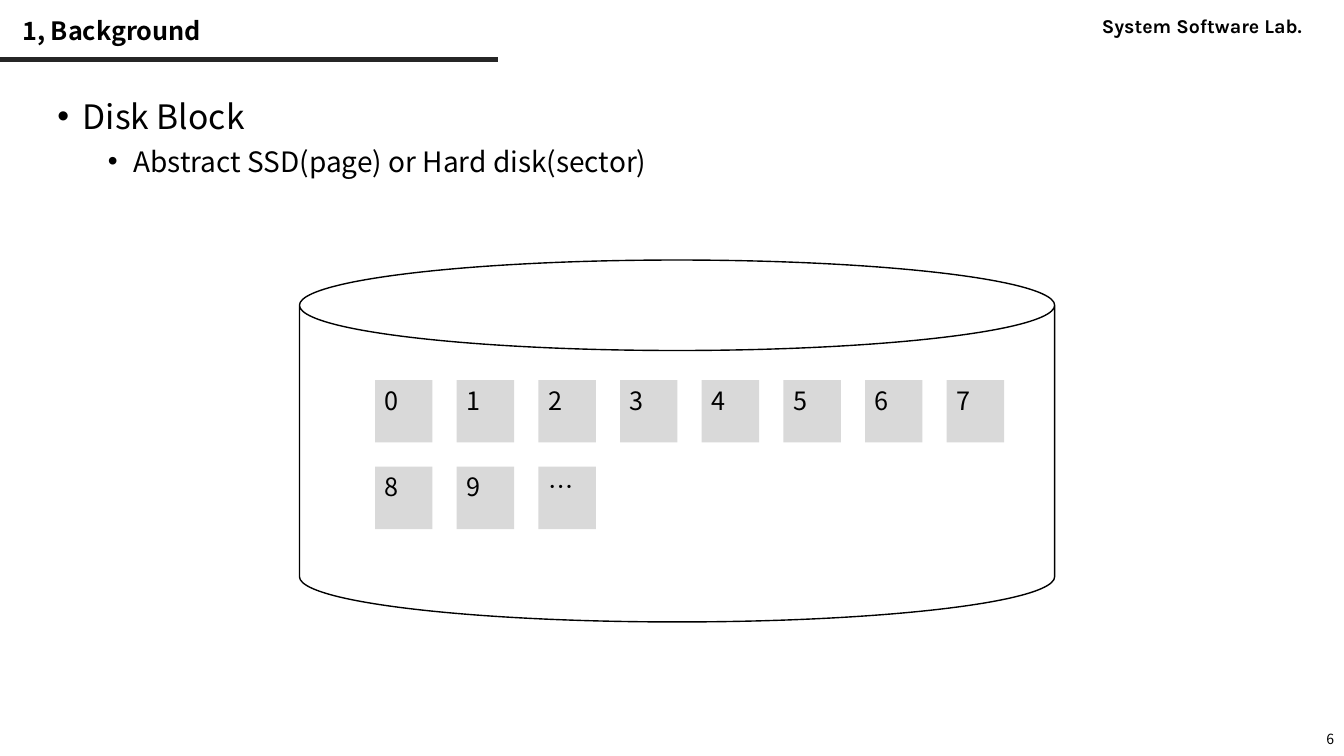
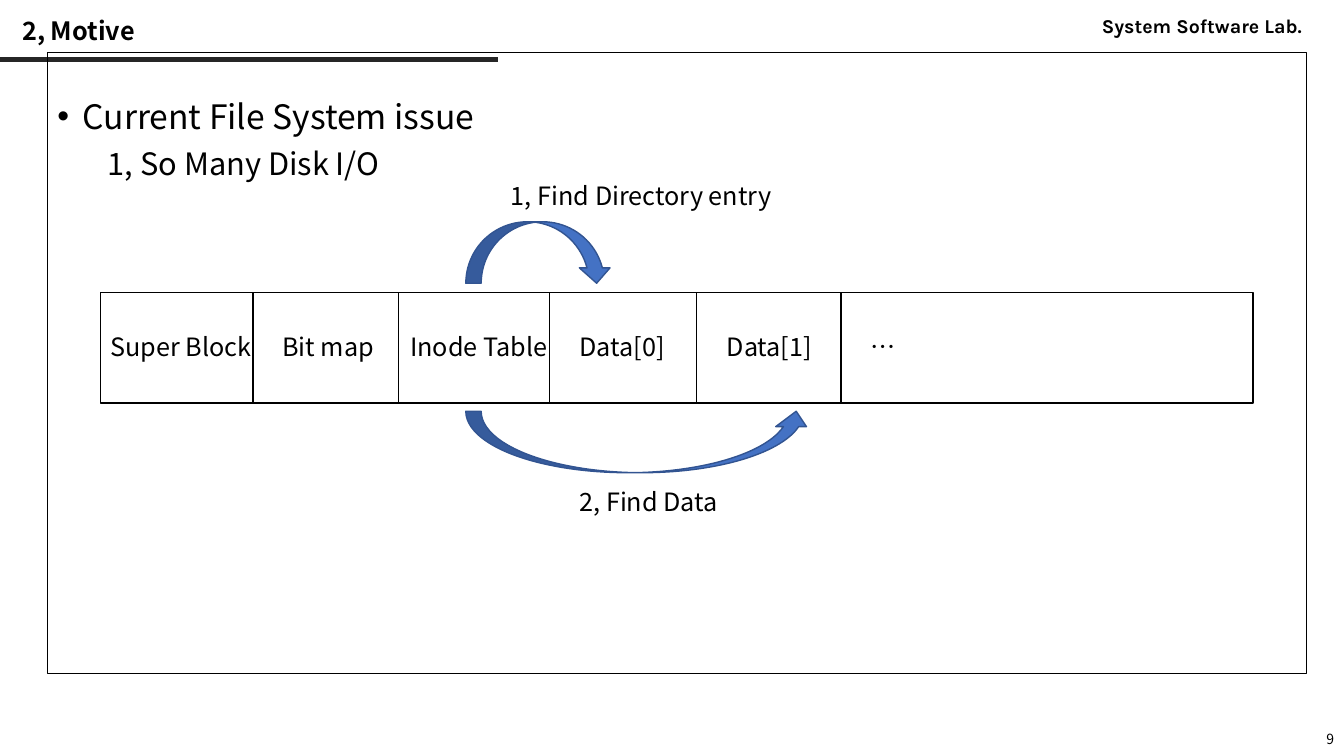
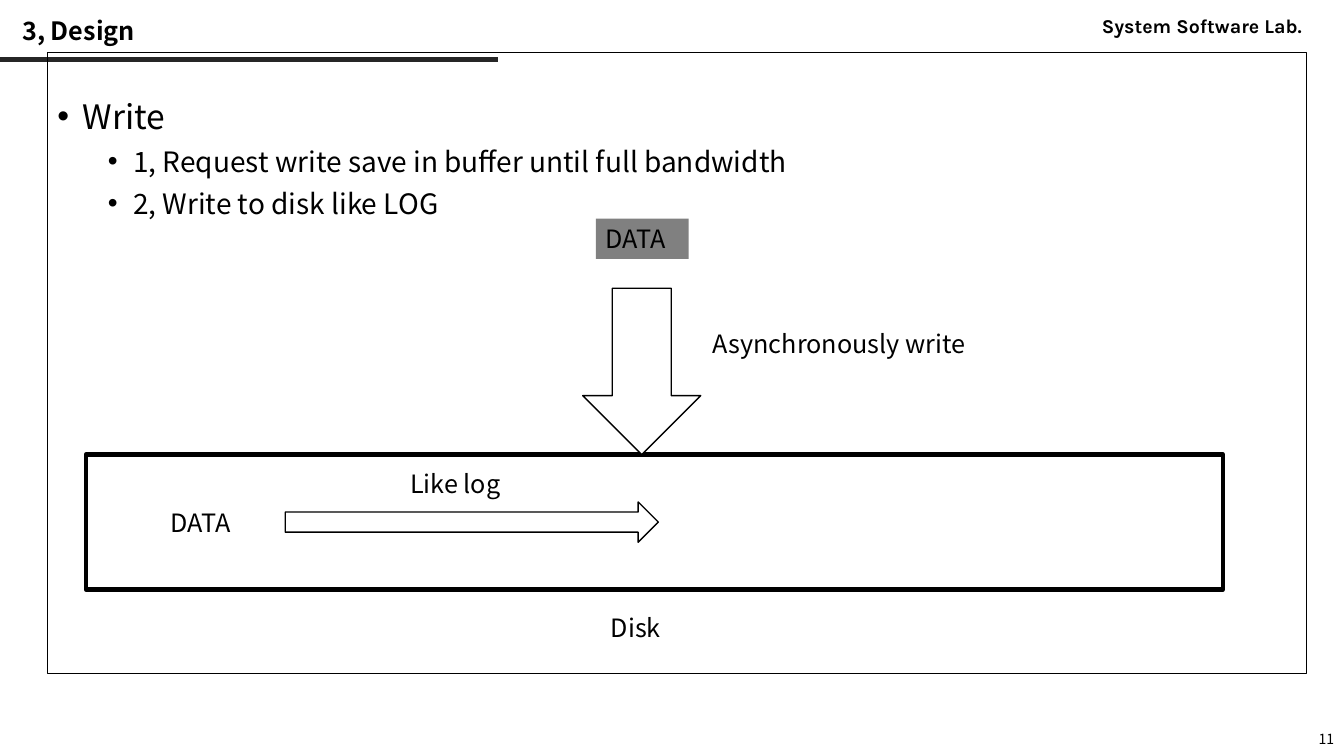
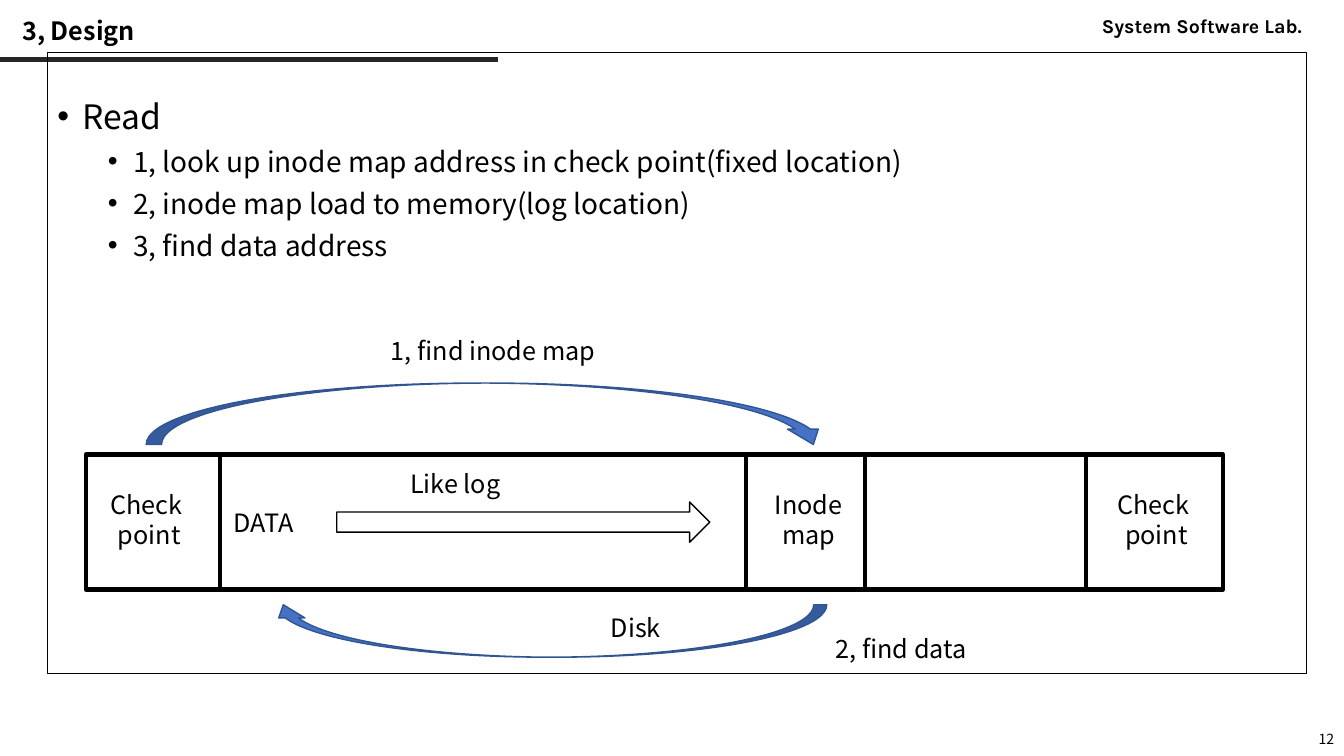
from lxml import etree
from pptx import Presentation
from pptx.dml.color import RGBColor
from pptx.enum.shapes import MSO_CONNECTOR, MSO_SHAPE
from pptx.enum.text import MSO_ANCHOR, MSO_AUTO_SIZE, PP_ALIGN
from pptx.oxml.ns import qn
from pptx.util import Inches, Pt

LINE = MSO_CONNECTOR.STRAIGHT
RECT, CAN = MSO_SHAPE.RECTANGLE, MSO_SHAPE.CAN
DOWN, RIGHT = MSO_SHAPE.DOWN_ARROW, MSO_SHAPE.RIGHT_ARROW
CURVED = MSO_SHAPE.CURVED_DOWN_ARROW
TOP, MIDDLE = MSO_ANCHOR.TOP, MSO_ANCHOR.MIDDLE
LEFT, CENTER, ALIGN_RIGHT = PP_ALIGN.LEFT, PP_ALIGN.CENTER, PP_ALIGN.RIGHT

BLACK = RGBColor(0x00, 0x00, 0x00)
WHITE = RGBColor(0xFF, 0xFF, 0xFF)
DARK = RGBColor(0x26, 0x26, 0x26)
TILE = RGBColor(0xD9, 0xD9, 0xD9)
GRAY = RGBColor(0x80, 0x80, 0x80)
BLUE = RGBColor(0x44, 0x72, 0xC4)
NAVY = RGBColor(0x32, 0x54, 0x91)
FONT = "Noto Sans CJK KR"


def write(tf, text, size=18, bold=False, font=FONT, align=LEFT, anchor=TOP,
          wrap=True, spacing=1.0):
    """Fill a text frame, one paragraph per line of text."""
    tf.word_wrap = wrap
    tf.auto_size = MSO_AUTO_SIZE.NONE
    tf.vertical_anchor = anchor
    for i, line in enumerate(text.split("\n")):
        p = tf.paragraphs[0] if i == 0 else tf.add_paragraph()
        p.alignment = align
        p.line_spacing = spacing
        p.space_before = Pt(0)
        r = p.add_run()
        r.text = line
        r.font.size = Pt(size)
        r.font.bold = bold
        r.font.color.rgb = BLACK
        r.font.name = font
        etree.SubElement(r.font._element, qn("a:ea")).set("typeface", font)


def draw(s, kind, at, fill=None, line=None, weight=1, flip=""):
    """Add a connector, a text box (kind None) or a preset shape."""
    x, y, w, h = [Inches(v) for v in at]
    if kind is None:
        return s.shapes.add_textbox(x, y, w, h)
    if kind is LINE:
        sp = s.shapes.add_connector(LINE, x, y, x + w, y + h)
    else:
        sp = s.shapes.add_shape(kind, x, y, w, h)
        sp.shadow.inherit = False
        if fill is None:
            sp.fill.background()
        else:
            sp.fill.solid()
            sp.fill.fore_color.rgb = fill
    if line is None:
        sp.line.fill.background()
    else:
        sp.line.color.rgb = line
        sp.line.width = Pt(weight)
    if kind is LINE:
        etree.SubElement(sp._element.spPr, qn("a:effectLst"))
    for axis in flip:
        sp._element.spPr.xfrm.set("flip" + axis, "1")
    return sp


prs = Presentation()
prs.slide_width, prs.slide_height = Inches(13.33), Inches(7.5)

# Shared layout: title and body places
layout = prs.slide_layouts[1]
for ph, at in zip(layout.placeholders, [(0.12, 0.12, 9.71, 0.4),
                                        (0.47, 0.52, 12.49, 6.16)]):
    ph.left, ph.top, ph.width, ph.height = [Inches(v) for v in at]

# Page number, title, heading, sub-items, their size, bulleted, framed
PAGES = [
    (6, "1, Background", "Disk Block",
     ["Abstract SSD(page) or Hard disk(sector)"], 20, True, False),
    (9, "2, Motive", "Current File System issue",
     ["1, So Many Disk I/O"], 22, False, True),
    (11, "3, Design", "Write",
     ["1, Request write save in buffer until full bandwidth",
      "2, Write to disk like LOG"], 20, True, True),
    (12, "3, Design", "Read",
     ["1, look up inode map address in check point(fixed location)",
      "2, inode map load to memory(log location)",
      "3, find data address"], 20, True, True),
]
slides = []
for number, title, heading, items, size, bulleted, framed in PAGES:
    s = prs.slides.add_slide(layout)
    slides.append(s)
    write(s.shapes.title.text_frame, title, bold=True, anchor=MIDDLE, spacing=0.9)

    # Bulleted body
    body = s.placeholders[1]
    if framed:
        body.line.color.rgb = BLACK
        body.line.width = Pt(0.75)
    tf = body.text_frame
    tf.margin_top = Inches(0.43)
    write(tf, "\n".join([heading] + items), size=size)
    tf.paragraphs[0].runs[0].font.size = Pt(24)
    for i, p in enumerate(tf.paragraphs):
        has_bullet = i == 0 or bulleted
        p.level = min(i, 1)
        p.space_before = Pt(6 if i else 0)
        pPr = p._p.get_or_add_pPr()
        hang = 0.25 if has_bullet else 0
        pPr.set("marL", str(Inches(0.5 * p.level + hang)))
        pPr.set("indent", str(-Inches(hang)))
        if has_bullet:
            etree.SubElement(pPr, qn("a:buFont")).set("typeface", "Arial")
            etree.SubElement(pPr, qn("a:buChar")).set("char", "•")
        else:
            etree.SubElement(pPr, qn("a:buNone"))

    write(draw(s, None, (10.33, 7.17, 3, 0.32)).text_frame, str(number),
          size=10, align=ALIGN_RIGHT, anchor=MIDDLE)

# Header rule and lab name, moved from the first slide to the layout
rule = draw(slides[0], LINE, (0, 0.59, 4.94, 0), line=DARK, weight=3)
lab = draw(slides[0], None, (10.83, 0.09, 2.36, 0.34))
write(lab.text_frame, "System Software Lab.", size=14, bold=True, font="Karla",
      wrap=False)
for sp in (rule, lab):
    layout.shapes._spTree.append(sp._element)

background, motive, log_write, log_read = slides

# Background: disk with numbered blocks, eight to a row
draw(background, CAN, (2.97, 2.58, 7.49, 3.59), WHITE, BLACK)
for i, label in enumerate("0123456789…"):
    row, col = divmod(i, 8)
    tile = draw(background, RECT, (3.72 + 0.81 * col, 3.77 + 0.86 * row, 0.57, 0.62),
                TILE)
    write(tile.text_frame, label)

# Motive: disk regions and the two lookups
draw(motive, RECT, (1, 2.9, 11.43, 1.1), WHITE, BLACK)
for x in (2.51, 3.95, 5.45, 6.91, 8.34):
    draw(motive, LINE, (x, 2.9, 0, 1.1), line=BLACK)
for x, label in [(1, "Super Block"), (2.7, "Bit map"), (3.97, "Inode Table"),
                 (5.65, "Data[0]"), (7.11, "Data[1]"), (8.54, "…")]:
    write(draw(motive, None, (x, 3.24, 1.63, 0.4)).text_frame, label)
draw(motive, CURVED, (4.62, 2.2, 1.45, 0.61), BLUE, NAVY)
draw(motive, CURVED, (4.62, 4.08, 3.43, 0.61), BLUE, NAVY, flip="V")
for x, y, label in [(4.97, 1.74, "1, Find Directory entry"),
                    (5.65, 4.78, "2, Find Data")]:
    write(draw(motive, None, (x, y, 3.67, 0.4)).text_frame, label)

# Design: the log on disk, shared by write and read
for s, data_x, arrow_x in [(log_write, 1.59, 2.83), (log_read, 2.22, 3.34)]:
    draw(s, RECT, (0.85, 4.51, 11.28, 1.34), line=BLACK, weight=3)
    draw(s, RIGHT, (arrow_x, 4.98, 3.7, 0.4), WHITE, BLACK)
    for x, y, w, label in [(5.96, 6.03, 1.14, "Disk"), (data_x, 4.98, 0.92, "DATA"),
                           (3.97, 4.6, 2.86, "Like log")]:
        write(draw(s, None, (x, y, w, 0.4)).text_frame, label)

# Write: data goes down to the disk
write(draw(log_write, RECT, (5.91, 2.17, 0.92, 0.4), GRAY).text_frame, "DATA")
draw(log_write, DOWN, (5.78, 2.86, 1.17, 1.65), WHITE, BLACK)
write(draw(log_write, None, (6.97, 3.21, 2.86, 0.4)).text_frame, "Asynchronously write")

# Read: check points, inode map and the two lookups
for x in (2.18, 10.77):
    draw(log_read, LINE, (x, 4.51, 0, 1.34), line=BLACK, weight=3)
draw(log_read, RECT, (7.4, 4.51, 1.18, 1.34), line=BLACK, weight=3)
for x, w, label in [(0.17, 2.62, "Check \npoint"), (10.16, 2.62, "Check \npoint"),
                    (7.45, 1.14, "Inode map")]:
    write(draw(log_read, None, (x, 4.8, w, 0.71)).text_frame, label, align=CENTER)
draw(log_read, CURVED, (1.45, 3.8, 6.77, 0.61), BLUE, NAVY)
draw(log_read, CURVED, (2.68, 6, 5.52, 0.52), BLUE, NAVY, flip="HV")
for x, y, label in [(3.78, 3.28, "1, find inode map"), (8.19, 6.23, "2, find data")]:
    write(draw(log_read, None, (x, y, 2.83, 0.4)).text_frame, label)

prs.save("out.pptx")
